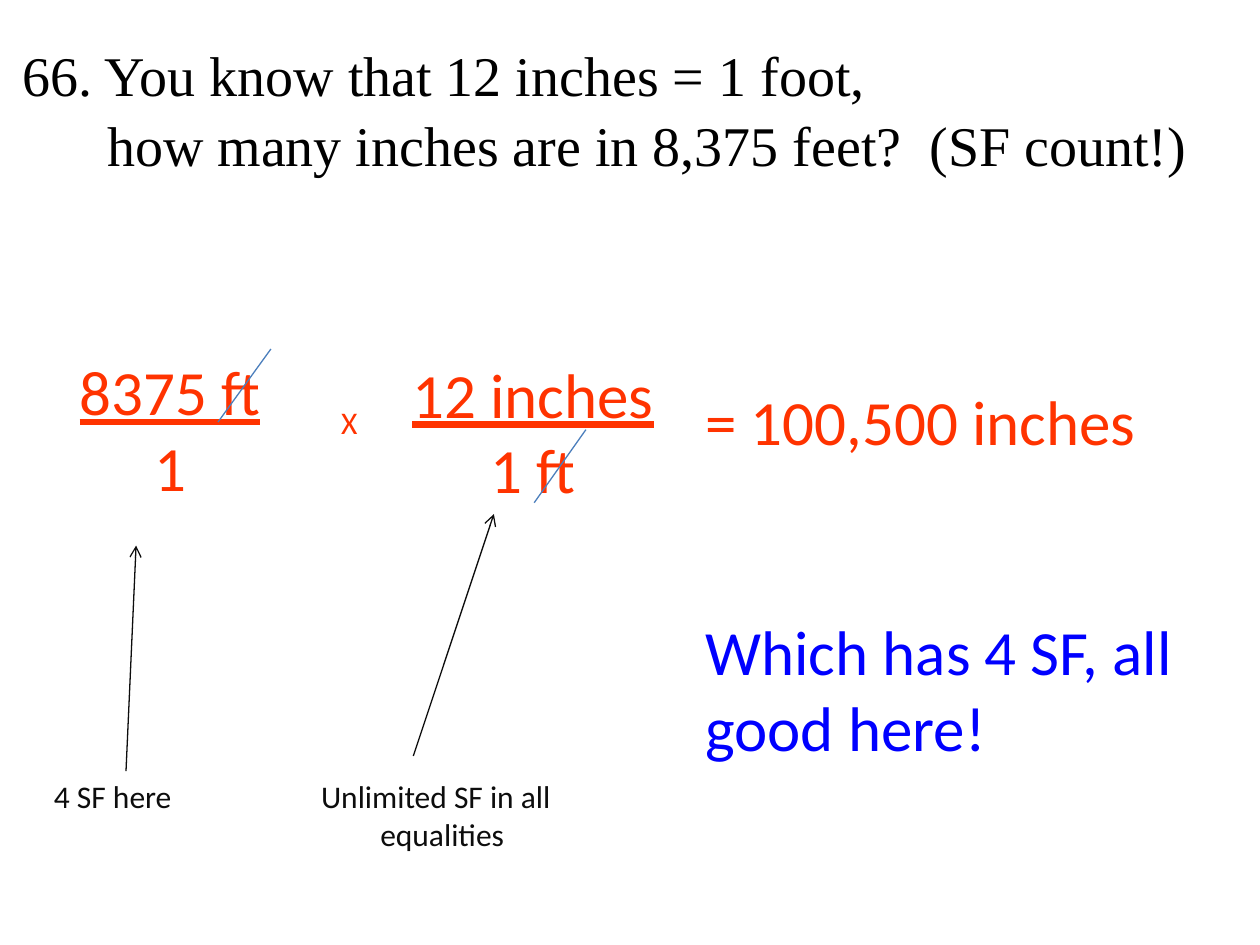
from dataclasses import dataclass

from lxml.etree import SubElement
from pptx import Presentation
from pptx.dml.color import RGBColor
from pptx.enum.shapes import MSO_CONNECTOR
from pptx.enum.text import MSO_ANCHOR, MSO_AUTO_SIZE, PP_ALIGN
from pptx.oxml.ns import qn
from pptx.util import Inches, Pt


@dataclass(frozen=True)
class Theme:
    black: str = "000000"
    note: str = "0D0D0D"
    work: str = "FF3300"
    remark: str = "0000FF"
    strike: str = "4B7EBC"
    question_font: str = "Times New Roman"
    body_font: str = "Calibri"
    question_size: int = 32
    work_size: int = 36
    note_size: int = 18
    line_width: float = 0.75


THEME = Theme()


def prepare_frame(frame):
    frame.word_wrap = True
    frame.auto_size = MSO_AUTO_SIZE.NONE
    frame.vertical_anchor = MSO_ANCHOR.TOP


def write(frame, text, *, size, color, font=THEME.body_font, align=PP_ALIGN.LEFT,
          underline=False, indent=0, before=0, spacing=1.0):
    """Add one formatted paragraph, filling the empty first one if there is one."""
    para = frame.paragraphs[0] if not frame.text else frame.add_paragraph()
    para.alignment = align
    para.space_before = Pt(before)
    para.line_spacing = spacing
    if indent:
        properties = para._p.get_or_add_pPr()
        properties.set("marL", str(Inches(indent)))
        properties.set("indent", "0")
    span = para.add_run()
    span.text = text
    span.font.name = font
    span.font.size = Pt(size)
    span.font.underline = underline
    span.font.color.rgb = RGBColor.from_string(color)


def add_box(page, left, top, width, height):
    box = page.shapes.add_textbox(Inches(left), Inches(top), Inches(width), Inches(height))
    prepare_frame(box.text_frame)
    return box.text_frame


def add_question(page, first, second):
    title = page.shapes.title
    title.left, title.top = Inches(0.08), Inches(0.25)
    title.width, title.height = Inches(9.75), Inches(1.48)
    prepare_frame(title.text_frame)
    style = dict(size=THEME.question_size, color=THEME.black,
                 font=THEME.question_font, spacing=1.04)
    write(title.text_frame, first, **style)
    write(title.text_frame, second, indent=0.67, **style)


def add_fraction(page, left, top, numerator, denominator):
    frame = add_box(page, left, top, 2.58, 1.31)
    style = dict(size=THEME.work_size, color=THEME.work, align=PP_ALIGN.CENTER)
    write(frame, numerator, underline=True, **style)
    write(frame, denominator, **style)


def add_line(page, start, end, color, arrow=False):
    line = page.shapes.add_connector(MSO_CONNECTOR.STRAIGHT,
                                     *map(Inches, start), *map(Inches, end))
    line.line.color.rgb = RGBColor.from_string(color)
    line.line.width = Pt(THEME.line_width)
    if arrow:
        SubElement(line.line._get_or_add_ln(), qn("a:tailEnd"), type="arrow")
    SubElement(line._element.spPr, qn("a:effectLst"))


def main():
    deck = Presentation()
    deck.slide_width, deck.slide_height = Inches(10), Inches(7.5)
    page = deck.slides.add_slide(deck.slide_layouts[5])

    # Question
    add_question(page, "66. You know that 12 inches = 1 foot,",
                 "how many inches are in 8,375 feet?  (SF count!)")

    # Conversion
    add_fraction(page, 0.06, 2.75, "8375 ft", "1")
    times = add_box(page, 2.61, 3.15, 0.67, 0.4)
    write(times, "X", size=THEME.note_size, color=THEME.work)
    add_fraction(page, 2.94, 2.77, "12 inches", "1 ft")

    # Result and remark
    result = add_box(page, 5.5, 2.99, 4.33, 3.13)
    write(result, "= 100,500 inches", size=THEME.work_size, color=THEME.work)
    write(result, "Which has 4 SF, all good here!", size=THEME.work_size,
          color=THEME.remark, before=88)

    # Cancelled units
    for start, end in (((2.15, 2.77), (1.73, 3.35)), ((4.65, 3.41), (4.24, 3.99))):
        add_line(page, start, end, THEME.strike)

    # Notes on significant figures, with arrows to the fractions
    note_style = dict(size=THEME.note_size, color=THEME.note)
    write(add_box(page, 0.33, 6.12, 1.5, 0.4), "4 SF here", **note_style)
    equality_note = add_box(page, 2.45, 6.12, 2.2, 0.71)
    write(equality_note, "Unlimited SF in all", **note_style)
    write(equality_note, "equalities", indent=0.47, **note_style)
    for start, end in (((1, 6.12), (1.08, 4.33)), ((3.28, 6), (3.92, 4.08))):
        add_line(page, start, end, THEME.note, arrow=True)

    deck.save("out.pptx")


if __name__ == "__main__":
    main()
